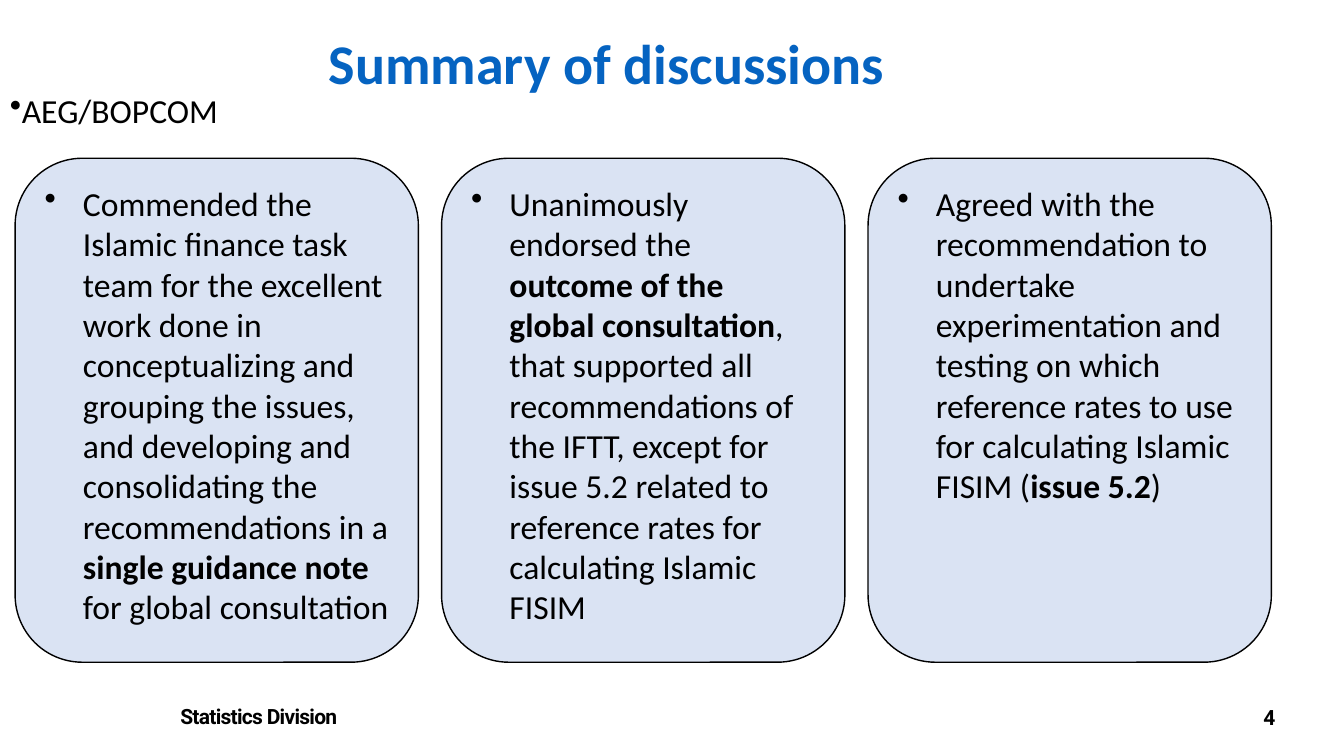
from lxml import etree
from pptx import Presentation
from pptx.dml.color import RGBColor
from pptx.enum.shapes import MSO_SHAPE
from pptx.enum.text import MSO_ANCHOR, PP_ALIGN
from pptx.oxml.ns import qn
from pptx.util import Emu, Pt

RECT, ROUND = MSO_SHAPE.RECTANGLE, MSO_SHAPE.ROUNDED_RECTANGLE
TOP = MSO_ANCHOR.TOP
LEFT, MID, RIGHT = PP_ALIGN.LEFT, PP_ALIGN.CENTER, PP_ALIGN.RIGHT
BLACK, WHITE, BLUE, PALE = "000000", "FFFFFF", "0563C1", "DAE3F3"


def px(n):
    """One px is a hundredth of an inch."""
    return Emu(n * 9144)


def color(code):
    return RGBColor.from_string(code)


def write(shape, runs, size=24, font="Calibri", ink=BLACK, align=LEFT,
          indent=None, space=None):
    """Fill a shape with one paragraph of (text, bold) runs."""
    frame = shape.text_frame
    frame.word_wrap = True
    frame.vertical_anchor = TOP
    para = frame.paragraphs[0]
    para.alignment = align
    if indent:
        props = para._p.get_or_add_pPr()
        props.set("marL", str(px(indent[0])))
        props.set("indent", str(px(indent[1])))
        etree.SubElement(props, qn("a:buChar")).set("char", "•")
    for text, bold in runs:
        run = para.add_run()
        run.text = text
        run.font.size = Pt(size)
        run.font.name = font
        run.font.bold = bold
        run.font.color.rgb = color(ink)
        if space:
            run._r.get_or_add_rPr().set("spc", str(space))


class Deck:
    def __init__(self):
        self.file = Presentation()
        self.file.slide_width = px(1333)
        self.file.slide_height = px(750)
        self.slide = self.file.slides.add_slide(self.file.slide_layouts[6])

    def label(self, box, runs, **style):
        write(self.slide.shapes.add_textbox(*map(px, box)), runs, **style)

    def panel(self, kind, box, runs, fill, line=None, **style):
        shape = self.slide.shapes.add_shape(kind, *map(px, box))
        shape.shadow.inherit = False
        shape.fill.solid()
        shape.fill.fore_color.rgb = color(fill)
        if line:
            shape.line.color.rgb = color(line)
            shape.line.width = Pt(1)
        else:
            shape.line.fill.background()
        write(shape, runs, **style)


CARDS = [
    [("Commended the Islamic finance task team for the excellent work done in "
      "conceptualizing and grouping the issues, and developing and "
      "consolidating the recommendations in a ", False),
     ("single guidance note", True),
     (" for global consultation", False)],
    [("Unanimously endorsed the ", False),
     ("outcome of the global consultation", True),
     (", that supported all recommendations of the IFTT, except for issue 5.2 "
      "related to reference rates for calculating Islamic FISIM", False)],
    [("Agreed with the recommendation to undertake experimentation and testing "
      "on which reference rates to use for calculating Islamic FISIM (", False),
     ("issue 5.2", True),
     (")", False)],
]


def main():
    deck = Deck()

    # Footer and page number
    foot = dict(fill=WHITE, size=15, font="Roboto", space=-50)
    deck.panel(RECT, (169, 693, 584, 35), [("Statistics Division", True)], **foot)
    deck.panel(RECT, (1085, 694, 190, 35), [("4", True)], align=RIGHT, **foot)

    # Title and subtitle
    deck.label((166, 23, 871, 77), [("Summary of discussions", True)],
               size=40, ink=BLUE, align=MID)
    deck.label((0, 84, 1233, 50), [("AEG/BOPCOM", False)], indent=(6, -38))

    # Three cards in a row
    for col, runs in enumerate(CARDS):
        deck.panel(ROUND, (15 + 423 * col, 157, 400, 500), runs,
                   fill=PALE, line=BLACK, indent=(38, -38))

    deck.file.save("out.pptx")


if __name__ == "__main__":
    main()
